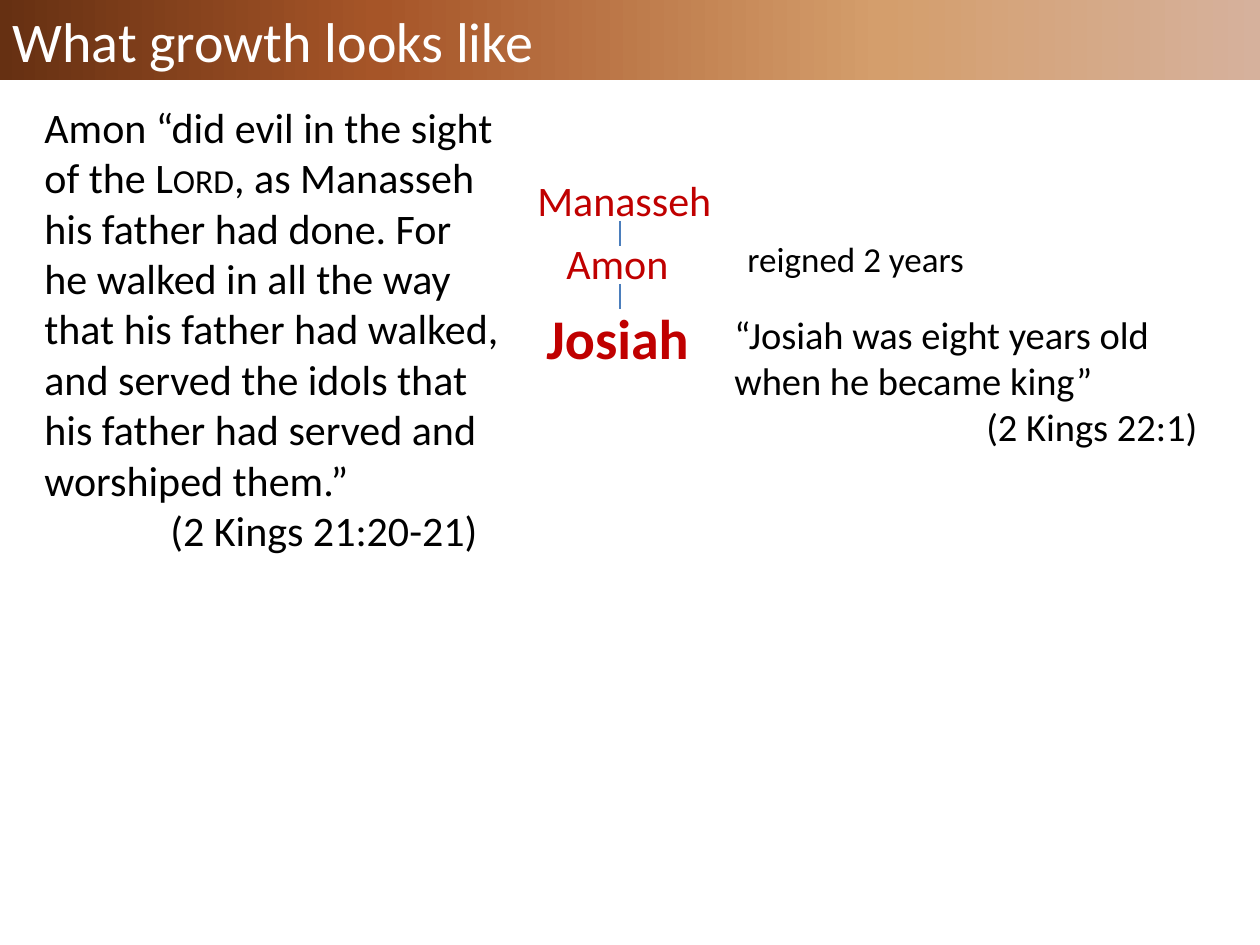
import pptx
import pptx.dml.color
import pptx.enum.shapes
import pptx.enum.text
import pptx.oxml
import pptx.oxml.ns
import pptx.util
from lxml import etree

PX_PER_INCH = 126
COLORS = {"text": "000000", "title": "FFFFFF", "king": "C00000", "line": "4B7EBC"}
BANNER_STOPS = {0: "663012", 30: "A65528", 70: "D49E6C", 100: "D6B19C"}
qn = pptx.oxml.ns.qn


def px(length):
    return pptx.util.Emu(round(length * 914400 / PX_PER_INCH))


def rgb(name):
    return pptx.dml.color.RGBColor.from_string(COLORS[name])


def write(paragraph, text, size=24, color="text", bold=False, small_caps=False):
    run = paragraph.add_run()
    run.text = text
    run.font.name = "Calibri"
    run.font.size = pptx.util.Pt(size)
    run.font.bold = bold
    run.font.color.rgb = rgb(color)
    if small_caps:
        run.font._element.set("cap", "small")


class SlideBuilder:
    """Holds the current slide and adds elements in its style."""

    def __init__(self, presentation):
        self.slide = presentation.slides.add_slide(presentation.slide_layouts[5])

    def place(self, shape, left, top, width, height):
        shape.left, shape.top = px(left), px(top)
        shape.width, shape.height = px(width), px(height)

    def banner(self, text, width, height):
        title = self.slide.shapes.title
        self.place(title, 0, 0, width, height)
        title.fill.gradient()
        title.fill.gradient_angle = 0
        stops = title._element.spPr.find(".//" + qn("a:gsLst"))
        stops.clear()
        for percent, color in BANNER_STOPS.items():
            stop = etree.SubElement(stops, qn("a:gs"), pos=str(percent * 1000))
            etree.SubElement(stop, qn("a:srgbClr"), val=color)
        frame = title.text_frame
        frame.auto_size = pptx.enum.text.MSO_AUTO_SIZE.NONE
        frame.vertical_anchor = pptx.enum.text.MSO_ANCHOR.MIDDLE
        frame.paragraphs[0].alignment = pptx.enum.text.PP_ALIGN.LEFT
        write(frame.paragraphs[0], text, size=32, color="title")

    def text_frame(self, left, top, width, height, wrap):
        box = self.slide.shapes.add_textbox(px(left), px(top), px(width), px(height))
        box.text_frame.word_wrap = wrap
        box.text_frame.auto_size = pptx.enum.text.MSO_AUTO_SIZE.SHAPE_TO_FIT_TEXT
        return box.text_frame

    def label(self, text, left, top, width, height, **style):
        frame = self.text_frame(left, top, width, height, wrap=False)
        write(frame.paragraphs[0], text, **style)

    def quotation(self, parts, source, indent, left, top, width, height, size):
        """Adds a quotation, given as (text, style) parts, and its indented source."""
        frame = self.text_frame(left, top, width, height, wrap=True)
        for text, style in parts:
            write(frame.paragraphs[0], text, size=size, **style)
        citation = frame.add_paragraph()
        properties = citation._p.get_or_add_pPr()
        properties.set("marL", str(px(indent)))
        properties.set("indent", "0")
        write(citation, source, size=size)

    def descent(self, x, top, length):
        line = self.slide.shapes.add_connector(
            pptx.enum.shapes.MSO_CONNECTOR.STRAIGHT,
            px(x), px(top), px(x), px(top + length))
        line.line.color.rgb = rgb("line")
        line.line.width = pptx.util.Pt(0.75)
        etree.SubElement(line._element.spPr, qn("a:effectLst"))


def main():
    presentation = pptx.Presentation()
    presentation.slide_width, presentation.slide_height = px(1260), px(945)
    builder = SlideBuilder(presentation)
    builder.banner("What growth looks like", 1260, 80)

    builder.quotation(
        [("Amon “did evil in the sight of the ", {}),
         ("Lord", {"small_caps": True}),
         (", as Manasseh his father had done. For he walked in all the way "
          "that his father had walked, and served the idols that his father "
          "had served and worshiped them.”", {})],
        "(2 Kings 21:20-21)", PX_PER_INCH, 32, 95, 482, 471, size=24)

    builder.label("Josiah", 534, 297, 169, 81, size=32, color="king", bold=True)
    builder.label("Amon", 554, 231, 129, 63, color="king")
    builder.label("Manasseh", 525, 168, 202, 63, color="king")
    for top in (284, 221):
        builder.descent(620, top, 25)

    builder.quotation(
        [("“Josiah was eight years old when he became king”", {})],
        "(2 Kings 22:1)", 2 * PX_PER_INCH, 722, 305, 528, 152, size=22)
    builder.label("reigned 2 years", 735, 231, 244, 55, size=20)

    presentation.save("out.pptx")


if __name__ == "__main__":
    main()
